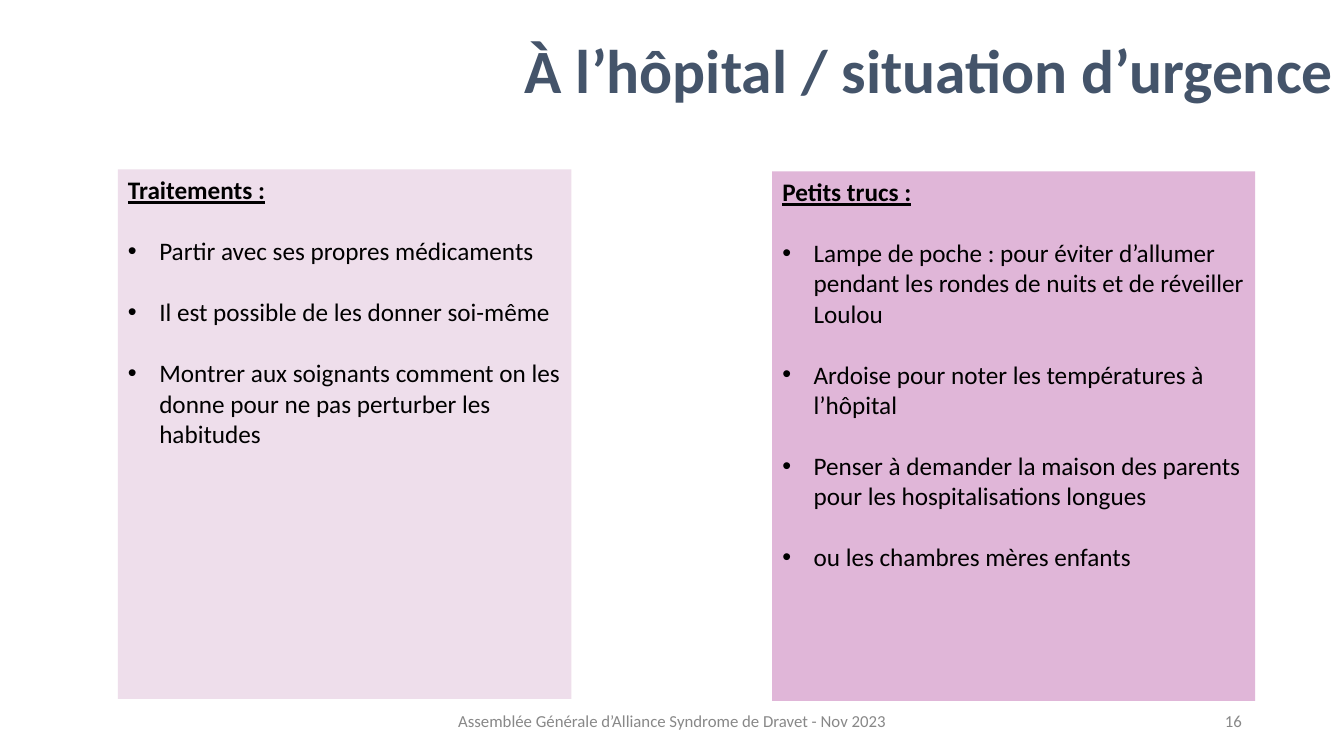
from dataclasses import dataclass

from lxml.etree import SubElement
from pptx import Presentation
from pptx.dml.color import RGBColor as Rgb
from pptx.enum.text import MSO_ANCHOR as Anchor, MSO_AUTO_SIZE as Fit, PP_ALIGN as Align
from pptx.oxml.ns import qn
from pptx.util import Cm, Pt


# Theme
@dataclass(frozen=True)
class Theme:
    font: str = "Calibri"
    ink: str = "000000"
    navy: str = "44546A"
    grey: str = "888888"
    pale: str = "EEDEEB"
    mauve: str = "E0B6D8"
    title: int = 44
    body: int = 18
    foot: int = 12
    gap: int = 22
    indent: float = 0.79


@dataclass(frozen=True)
class Box:
    left: float
    top: float
    width: float
    height: float


@dataclass(frozen=True)
class Panel:
    box: Box
    fill: str
    head: str
    items: tuple[str, ...]


@dataclass(frozen=True)
class Note:
    box: Box
    text: str
    align: Align


THEME = Theme()

# Content
TITLE = "À l’hôpital / situation d’urgence"
PANELS = (
    Panel(Box(2.97, 4.27, 11.43, 13.34), THEME.pale, "Traitements :", (
        "Partir avec ses propres médicaments",
        "Il est possible de les donner soi-même",
        "Montrer aux soignants comment on les donne pour ne pas perturber les habitudes",
    )),
    Panel(Box(19.46, 4.32, 12.17, 13.34), THEME.mauve, "Petits trucs :", (
        "Lampe de poche : pour éviter d’allumer pendant les rondes de nuits et de réveiller Loulou",
        "Ardoise pour noter les températures à l’hôpital",
        "Penser à demander la maison des parents pour les hospitalisations longues",
        "ou les chambres mères enfants",
    )),
)
NOTES = (
    Note(Box(11.23, 17.65, 11.43, 1.02),
         "Assemblée Générale d’Alliance Syndrome de Dravet - Nov 2023", Align.CENTER),
    Note(Box(23.93, 17.65, 7.62, 1.02), "16", Align.RIGHT),
)


# Helpers
def place(shape, box: Box) -> None:
    shape.left, shape.top = Cm(box.left), Cm(box.top)
    shape.width, shape.height = Cm(box.width), Cm(box.height)


def setup(frame, anchor: Anchor) -> None:
    frame.word_wrap = True
    frame.auto_size = Fit.NONE
    frame.vertical_anchor = anchor


def write(para, text: str, size: int, color: str, bold: bool = False, line: bool = False) -> None:
    run = para.add_run()
    run.text = text
    font = run.font
    font.name, font.size = THEME.font, Pt(size)
    font.bold, font.underline = bold, line
    font.color.rgb = Rgb.from_string(color)


def mark(para, bullet: bool) -> None:
    props = para._p.get_or_add_pPr()
    step = Cm(THEME.indent) if bullet else 0
    props.set("marL", str(step))
    props.set("indent", str(-step))
    if bullet:
        SubElement(SubElement(props, qn("a:buClr")), qn("a:srgbClr"), val=THEME.ink)
        SubElement(props, qn("a:buFont"), typeface="Arial")
        SubElement(props, qn("a:buChar"), char="•")
    else:
        SubElement(props, qn("a:buNone"))


def draw_title(shape) -> None:
    place(shape, Box(5.97, 0, 27.91, 2.82))
    setup(shape.text_frame, Anchor.BOTTOM)
    para = shape.text_frame.paragraphs[0]
    para.alignment, para.line_spacing = Align.RIGHT, 0.9
    write(para, TITLE, THEME.title, THEME.navy, bold=True)


def draw_panel(shape, panel: Panel) -> None:
    place(shape, panel.box)
    shape.fill.solid()
    shape.fill.fore_color.rgb = Rgb.from_string(panel.fill)
    frame = shape.text_frame
    setup(frame, Anchor.TOP)
    for row, text in enumerate((panel.head, *panel.items)):
        head = row == 0
        para = frame.paragraphs[0] if head else frame.add_paragraph()
        mark(para, bullet=not head)
        para.space_before = Pt(0 if head else THEME.gap)
        write(para, text, THEME.body, THEME.ink, bold=head, line=head)


def draw_note(slide, note: Note) -> None:
    shape = slide.shapes.add_textbox(0, 0, 0, 0)
    place(shape, note.box)
    setup(shape.text_frame, Anchor.MIDDLE)
    para = shape.text_frame.paragraphs[0]
    para.alignment = note.align
    write(para, note.text, THEME.foot, THEME.grey)


# Slide
def main() -> None:
    deck = Presentation()
    deck.slide_width, deck.slide_height = Cm(33.87), Cm(19.05)
    slide = deck.slides.add_slide(deck.slide_layouts[3])
    draw_title(slide.shapes.title)
    for slot, panel in enumerate(PANELS, start=1):
        draw_panel(slide.placeholders[slot], panel)
    for note in NOTES:
        draw_note(slide, note)
    deck.save("out.pptx")


if __name__ == "__main__":
    main()
